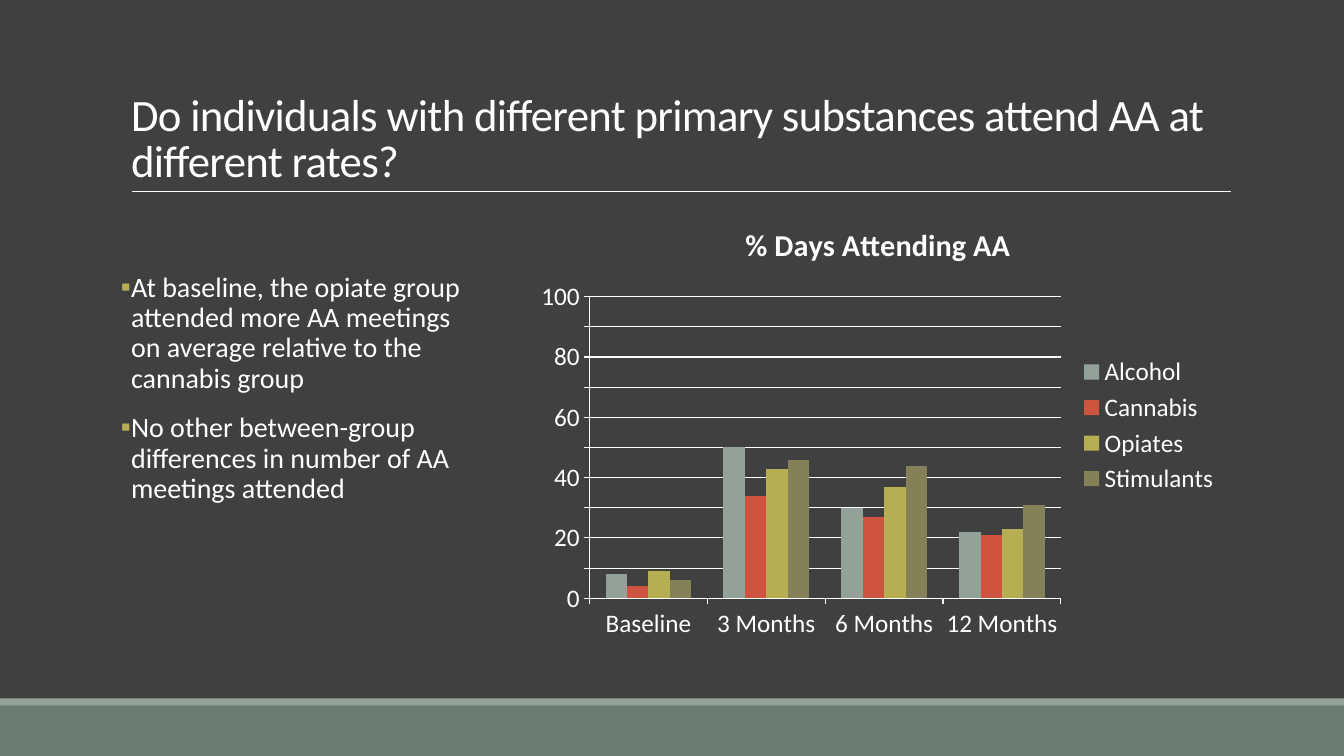
from dataclasses import dataclass

from lxml.etree import SubElement
from pptx import Presentation
from pptx.chart.data import CategoryChartData
from pptx.dml.color import RGBColor
from pptx.enum.chart import XL_CHART_TYPE, XL_LEGEND_POSITION, XL_TICK_MARK
from pptx.enum.shapes import MSO_CONNECTOR, MSO_SHAPE
from pptx.enum.text import MSO_ANCHOR, MSO_AUTO_SIZE, PP_ALIGN
from pptx.oxml.ns import qn
from pptx.util import Inches, Pt

CELL = 0.1
COLUMNS, ROWS = 133.33, 75


@dataclass(frozen=True)
class Theme:
    """Colours, font and type sizes of the slide."""
    background: str = "404040"
    text: str = "FFFFFF"
    band: str = "6B7D72"
    sage: str = "93A299"
    red: str = "CF543F"
    gold: str = "B5AE53"
    olive: str = "848058"
    font: str = "Calibri"
    title_size: float = 32
    body_size: float = 20
    chart_title_size: float = 21.6
    chart_size: float = 18


@dataclass(frozen=True)
class Box:
    """A rectangle in grid columns and rows."""
    column: float
    row: float
    columns: float
    rows: float

    def lengths(self) -> tuple:
        """Return left, top, width and height."""
        return tuple(Inches(cells * CELL) for cells in
                     (self.column, self.row, self.columns, self.rows))


@dataclass(frozen=True)
class Band:
    """A coloured strip across the foot of the slide."""
    box: Box
    color: str


@dataclass(frozen=True)
class Series:
    """One substance group of the chart."""
    name: str
    values: tuple
    color: str


THEME = Theme()
BANDS = (Band(Box(0, 70, COLUMNS, 5), THEME.band),
         Band(Box(0, 69.3, COLUMNS, 0.7), THEME.sage))
TITLE_BOX = Box(12, 3.1, 110, 15.9)
BODY_BOX = Box(12, 26.6, 35.3, 37.6)
CHART_BOX = Box(52.2, 20.2, 69.8, 44)
RULE_BOX = Box(13.1, 19, 109, 0)
PLOT_SHARES = {"x": 0.09, "y": 0.21, "w": 0.67, "h": 0.68}
TITLE = "Do individuals with different primary substances attend AA at different rates?"
FINDINGS = (
    "At baseline, the opiate group attended more AA meetings on average relative to the cannabis group",
    "No other between-group differences in number of AA meetings attended",
)
CATEGORIES = ("Baseline", "3 Months", "6 Months", "12 Months")
SERIES = (Series("Alcohol", (8, 50, 30, 22), THEME.sage),
          Series("Cannabis", (4, 34, 27, 21), THEME.red),
          Series("Opiates", (9, 43, 37, 23), THEME.gold),
          Series("Stimulants", (6, 46, 44, 31), THEME.olive))


def paint(fill, color: str) -> None:
    """Give a fill one solid colour."""
    fill.solid()
    fill.fore_color.rgb = RGBColor.from_string(color)


def format_font(font, size: float, bold: bool = False) -> None:
    """Set the theme's face and colour on a font."""
    font.name, font.size, font.bold = THEME.font, Pt(size), bold
    font.color.rgb = RGBColor.from_string(THEME.text)


def write_text(paragraph, text: str, *, size: float, bold: bool = False, line_spacing: float = 1,
               before: float = 0, after: float = 0, tracking: float = 0, bullet: str = "") -> None:
    """Write one formatted paragraph, with a bullet if one is given."""
    run = paragraph.add_run()
    run.text = text
    format_font(run.font, size, bold)
    paragraph.line_spacing = line_spacing
    paragraph.space_before, paragraph.space_after = Pt(before), Pt(after)
    if tracking:
        run.font._element.set("spc", str(round(tracking * 100)))
    if bullet:
        properties = paragraph._p.get_or_add_pPr()
        properties.set("marL", str(Inches(CELL)))
        properties.set("indent", str(-Inches(CELL)))
        color = SubElement(properties, qn("a:buClr"))
        SubElement(color, qn("a:srgbClr"), val=THEME.gold)
        SubElement(properties, qn("a:buFont"), typeface=THEME.font)
        SubElement(properties, qn("a:buChar"), char=bullet)


def place(shape, box: Box) -> None:
    """Move a shape to its place on the grid."""
    shape.left, shape.top, shape.width, shape.height = box.lengths()


def add_band(slide, band: Band) -> None:
    """Draw one strip."""
    shape = slide.shapes.add_shape(MSO_SHAPE.RECTANGLE, *band.box.lengths())
    shape.shadow.inherit = False
    paint(shape.fill, band.color)
    shape.line.fill.background()


def add_rule(slide, box: Box) -> None:
    """Draw the line under the title."""
    left, top, width, height = box.lengths()
    rule = slide.shapes.add_connector(MSO_CONNECTOR.STRAIGHT, left, top, left + width, top + height)
    rule.line.width = Pt(0.5)
    paint(rule.line.fill, THEME.text)
    SubElement(rule._element.spPr, qn("a:effectLst"))


def fill_title(slide) -> None:
    """Place and write the title."""
    title = slide.shapes.title
    place(title, TITLE_BOX)
    frame = title.text_frame
    frame.vertical_anchor, frame.auto_size = MSO_ANCHOR.BOTTOM, MSO_AUTO_SIZE.NONE
    paragraph = frame.paragraphs[0]
    paragraph.alignment = PP_ALIGN.LEFT
    write_text(paragraph, TITLE, size=THEME.title_size, line_spacing=0.85, tracking=-0.5)


def fill_findings(slide) -> None:
    """Place and write the list of findings."""
    body = slide.placeholders[1]
    place(body, BODY_BOX)
    frame = body.text_frame
    frame.auto_size = MSO_AUTO_SIZE.NONE
    frame.margin_left = frame.margin_right = 0
    for index, finding in enumerate(FINDINGS):
        paragraph = frame.add_paragraph() if index else frame.paragraphs[0]
        write_text(paragraph, finding, size=THEME.body_size, line_spacing=0.9,
                   before=12, after=2, bullet="▪")


def fix_plot_area(chart) -> None:
    """Set the inner plot area as shares of the chart."""
    plot_area = chart._chartSpace.chart.plotArea
    for old_layout in plot_area.findall(qn("c:layout")):
        plot_area.remove(old_layout)
    layout = SubElement(plot_area, qn("c:layout"))
    plot_area.insert(0, layout)
    manual = SubElement(layout, qn("c:manualLayout"))
    SubElement(manual, qn("c:layoutTarget"), val="inner")
    for side in "xy":
        SubElement(manual, qn(f"c:{side}Mode"), val="edge")
    for side, share in PLOT_SHARES.items():
        SubElement(manual, qn(f"c:{side}"), val=str(share))


def add_attendance_chart(slide) -> None:
    """Draw the clustered columns of attendance by substance."""
    data = CategoryChartData()
    data.categories = CATEGORIES
    for series in SERIES:
        data.add_series(series.name, series.values)
    chart = slide.shapes.add_chart(XL_CHART_TYPE.COLUMN_CLUSTERED, *CHART_BOX.lengths(), data).chart
    format_font(chart.font, THEME.chart_size)
    write_text(chart.chart_title.text_frame.paragraphs[0], "% Days Attending AA",
               size=THEME.chart_title_size, bold=True)
    chart.has_legend = True
    chart.legend.position = XL_LEGEND_POSITION.RIGHT
    chart.legend.include_in_layout = False
    plot = chart.plots[0]
    plot.gap_width, plot.overlap, plot.vary_by_categories = 150, 0, False
    for drawn, series in zip(plot.series, SERIES):
        paint(drawn.format.fill, series.color)
    scale = chart.value_axis
    scale.minimum_scale, scale.maximum_scale, scale.major_unit = 0, 100, 10
    scale.has_major_gridlines = True
    for axis in (chart.category_axis, scale):
        axis.major_tick_mark = XL_TICK_MARK.OUTSIDE
    for part in (chart.category_axis, scale, scale.major_gridlines):
        part.format.line.width = Pt(0.75)
        paint(part.format.line.fill, THEME.text)
    fix_plot_area(chart)


def main() -> None:
    """Build and save the slide."""
    presentation = Presentation()
    presentation.slide_width = Inches(COLUMNS * CELL)
    presentation.slide_height = Inches(ROWS * CELL)
    slide = presentation.slides.add_slide(presentation.slide_layouts[1])
    paint(slide.background.fill, THEME.background)
    for band in BANDS:
        add_band(slide, band)
    add_rule(slide, RULE_BOX)
    fill_title(slide)
    fill_findings(slide)
    add_attendance_chart(slide)
    presentation.save("out.pptx")


if __name__ == "__main__":
    main()
